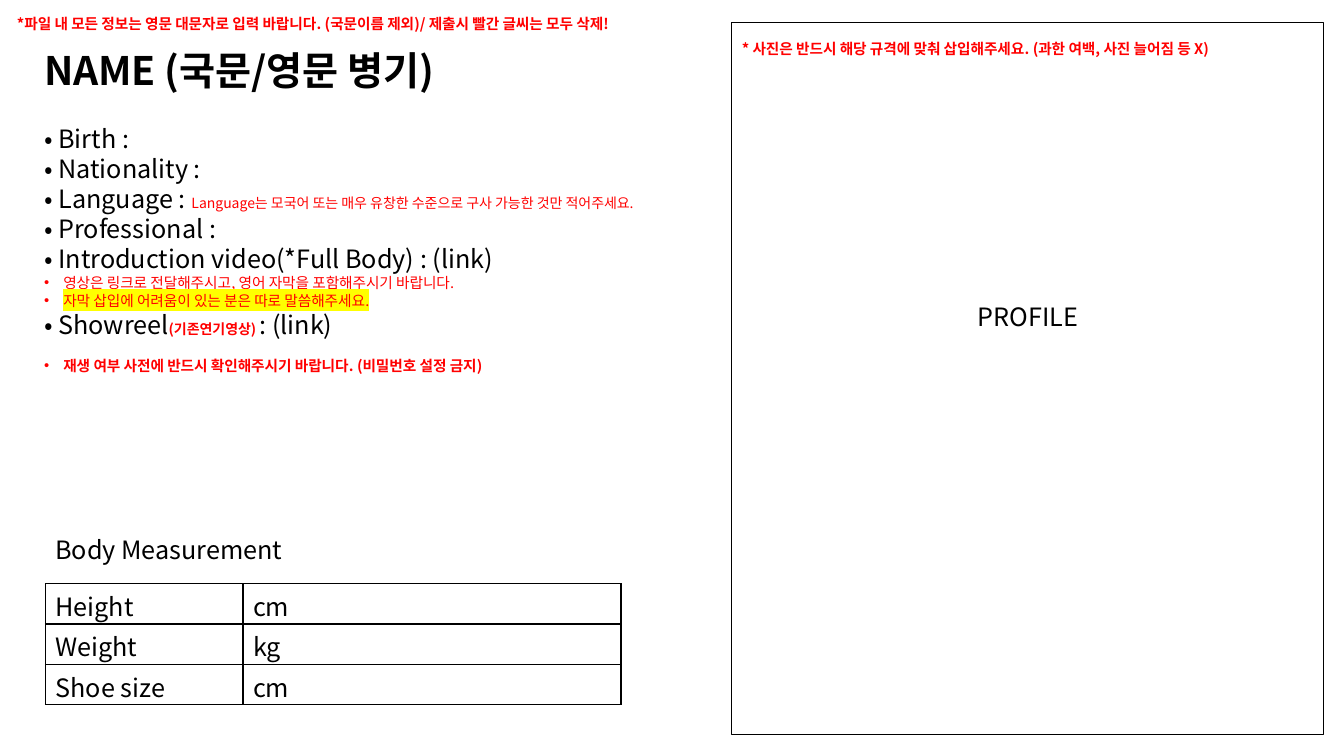
from dataclasses import dataclass

from pptx import Presentation
from pptx.dml.color import RGBColor
from pptx.enum.shapes import MSO_SHAPE
from pptx.enum.text import MSO_ANCHOR, PP_ALIGN
from pptx.oxml.ns import qn
from pptx.util import Inches, Pt
from lxml.etree import SubElement, Element


@dataclass(frozen=True)
class Theme:
    """Colours, font and type sizes of the profile form."""
    font: str = "Noto Sans CJK KR"
    ink: str = "000000"
    paper: str = "FFFFFF"
    warning: str = "FF0000"
    marker: str = "FFFF00"
    title: float = 28
    body: float = 18
    note: float = 10.5
    hint: float = 10


THEME = Theme()
LEADING = {THEME.title: 33.3, THEME.body: 21.4, THEME.note: 12.86}


def write(paragraph, text, size=THEME.body, color=THEME.ink, bold=False, highlight=None):
    """Add one formatted run to a paragraph."""
    run = paragraph.add_run()
    run.text = text
    font = run.font
    font.size, font.bold, font.name = Pt(size), bold, THEME.font
    font.color.rgb = RGBColor.from_string(color)
    properties = run._r.get_or_add_rPr()
    east_asian = Element(qn("a:ea"), typeface=THEME.font)
    properties.find(qn("a:latin")).addnext(east_asian)
    if highlight:
        marking = Element(qn("a:highlight"))
        SubElement(marking, qn("a:srgbClr"), val=highlight)
        properties.find(qn("a:solidFill")).addnext(marking)


class ProfileForm:
    """Holds the theme and the current slide and draws its elements."""

    def __init__(self, slide, theme):
        """Keep the slide and its theme."""
        self.slide, self.theme = slide, theme

    def fill_frame(self, frame, lines, top=0.075):
        """Write paragraphs given as (runs, settings) pairs into a frame."""
        frame.word_wrap = True
        frame.margin_left = frame.margin_right = Inches(0.1)
        frame.margin_top, frame.margin_bottom = Inches(top), Inches(0)
        for index, (runs, settings) in enumerate(lines):
            paragraph = frame.add_paragraph() if index else frame.paragraphs[0]
            paragraph.alignment = settings.get("align", PP_ALIGN.LEFT)
            paragraph.line_spacing = Pt(LEADING[settings.get("size", self.theme.body)])
            if "before" in settings:
                paragraph.space_before = Pt(settings["before"])
            if settings.get("bullet"):
                properties = paragraph._p.get_or_add_pPr()
                properties.set("marL", str(Inches(0.19)))
                properties.set("indent", str(-Inches(0.19)))
                SubElement(properties, qn("a:buFont"), typeface="Arial")
                SubElement(properties, qn("a:buChar"), char="•")
            for text, style in runs:
                write(paragraph, text, **style)

    def text(self, left, top, width, height, lines, inset=0.075):
        """Add a text box."""
        box = self.slide.shapes.add_textbox(*map(Inches, (left, top, width, height)))
        self.fill_frame(box.text_frame, lines, inset)

    def photo_area(self, left, top, width, height, label, label_top):
        """Add the outlined area reserved for the photo."""
        area = self.slide.shapes.add_shape(
            MSO_SHAPE.RECTANGLE, *map(Inches, (left, top, width, height)))
        area.shadow.inherit = False
        area.fill.background()
        area.line.color.rgb = RGBColor.from_string(self.theme.ink)
        area.line.width = Pt(0.75)
        area.text_frame.vertical_anchor = MSO_ANCHOR.TOP
        self.fill_frame(area.text_frame,
                        [([(label, {})], {"align": PP_ALIGN.CENTER})], label_top)

    def border(self, cell):
        """Draw a thin line on every side of a cell."""
        properties = cell._tc.get_or_add_tcPr()
        for position, side in enumerate(("lnL", "lnR", "lnT", "lnB")):
            line = Element(qn(f"a:{side}"), w=str(Pt(1)))
            fill = SubElement(line, qn("a:solidFill"))
            SubElement(fill, qn("a:srgbClr"), val=self.theme.ink)
            properties.insert(position, line)

    def table(self, left, top, widths, row_height, rows):
        """Add a bordered table."""
        frame = self.slide.shapes.add_table(
            len(rows), len(widths), Inches(left), Inches(top),
            Inches(sum(widths)), Inches(row_height * len(rows)))
        grid = frame.table
        grid.first_row = grid.horz_banding = False
        for column, width in zip(grid.columns, widths):
            column.width = Inches(width)
        for row, values in zip(grid.rows, rows):
            row.height = Inches(row_height)
            for cell, value in zip(row.cells, values):
                cell.fill.solid()
                cell.fill.fore_color.rgb = RGBColor.from_string(self.theme.paper)
                cell.margin_left = cell.margin_right = Inches(0.1)
                cell.margin_top, cell.margin_bottom = Inches(0.1), Inches(0)
                paragraph = cell.text_frame.paragraphs[0]
                paragraph.line_spacing = Pt(LEADING[self.theme.body])
                write(paragraph, value)
                self.border(cell)


def main():
    """Build the profile form and save it."""
    deck = Presentation()
    deck.slide_width, deck.slide_height = Inches(13.33), Inches(7.5)
    form = ProfileForm(deck.slides.add_slide(deck.slide_layouts[6]), THEME)

    note = {"size": THEME.note, "color": THEME.warning}
    bold_note = {**note, "bold": True}
    hint = {"size": THEME.hint, "color": THEME.warning}
    note_line = {"size": THEME.note}
    bullet_line = {**note_line, "bullet": True}

    form.text(0.34, 0.39, 6.67, 3.4, [
        ([("NAME (국문/영문 병기)", {"size": THEME.title, "bold": True})],
         {"size": THEME.title}),
        ([("• Birth :", {})], {"before": LEADING[THEME.body]}),
        ([("• Nationality :", {})], {}),
        ([("• Language : ", {}),
          ("Language는 모국어 또는 매우 유창한 수준으로 구사 가능한 것만 적어주세요.", hint)], {}),
        ([("• Professional :", {})], {}),
        ([("• Introduction video(*Full Body) : (link)", {})], {}),
        ([("영상은 링크로 전달해주시고, 영어 자막을 포함해주시기 바랍니다.", note)], bullet_line),
        ([("자막 삽입에 어려움이 있는 분은 따로 말씀해주세요.",
           {**note, "highlight": THEME.marker})], bullet_line),
        ([("• Showreel", {}), ("(기존연기영상) ", {**hint, "bold": True}),
          (": (link)", {})], {}),
        ([("재생 여부 사전에 반드시 확인해주시기 바랍니다. (비밀번호 설정 금지)", bold_note)],
         {**bullet_line, "before": 12}),
    ])
    form.table(0.45, 5.79, (1.96, 3.75), 0.4,
               [("Height", "cm"), ("Weight", "kg"), ("Shoe size", "cm")])
    form.photo_area(7.26, 0.22, 5.87, 7.07, "PROFILE", 2.77)
    form.text(0.45, 5.23, 4.37, 0.4, [([("Body Measurement", {})], {})])
    form.text(0.07, 0.09, 7.49, 0.28, [([(
        "*파일 내 모든 정보는 영문 대문자로 입력 바랍니다. (국문이름 제외)/ 제출시 빨간 글씨는 모두 삭제!",
        bold_note)], note_line)], 0.05)
    form.text(7.26, 0.34, 5.87, 0.28, [([(
        "* 사진은 반드시 해당 규격에 맞춰 삽입해주세요. (과한 여백, 사진 늘어짐 등 X)",
        bold_note)], note_line)], 0.05)
    deck.save("out.pptx")


if __name__ == "__main__":
    main()
